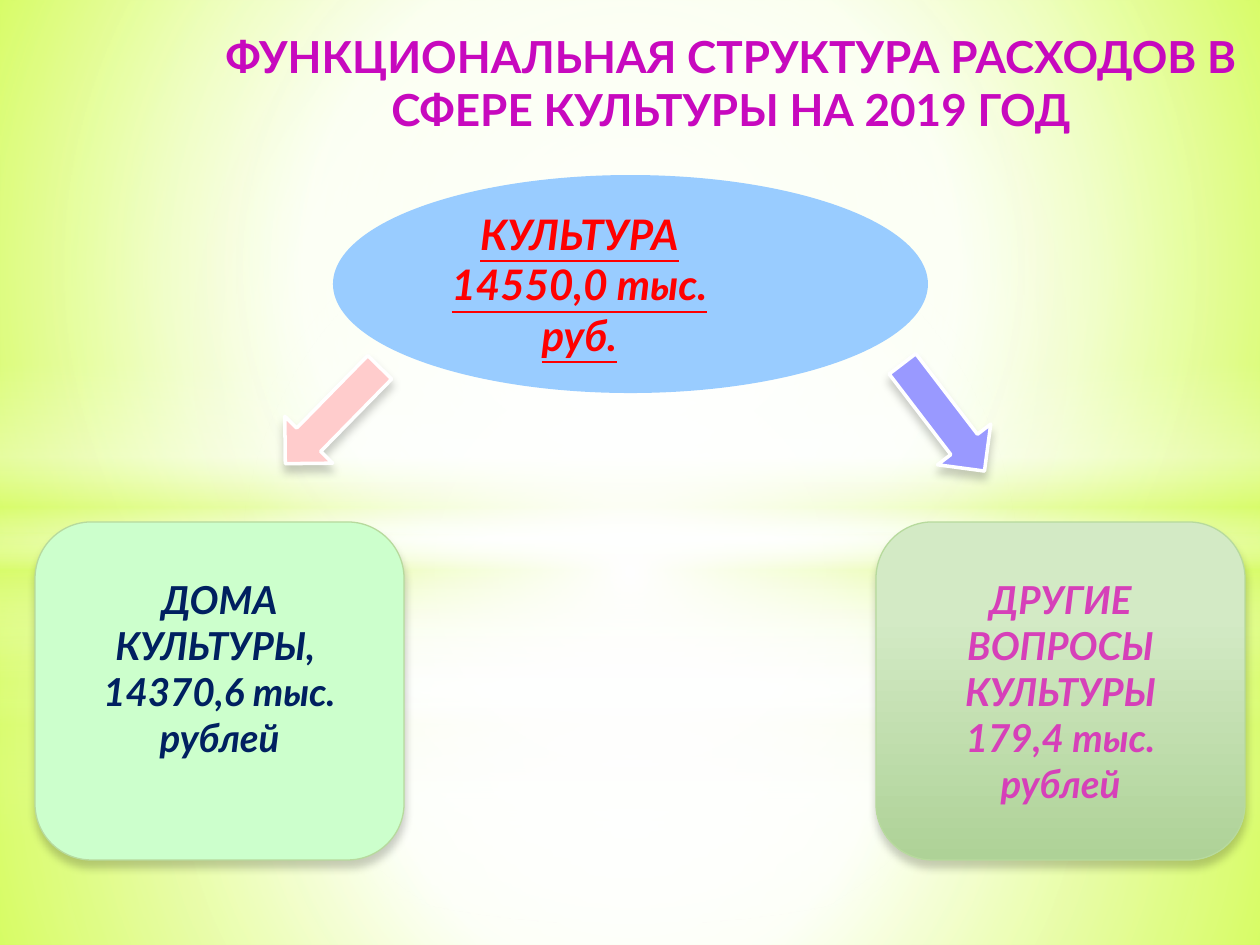
from pptx import Presentation
from pptx.dml.color import RGBColor
from pptx.enum import shapes, text
from pptx.oxml import parse_xml
from pptx.oxml.ns import nsdecls, qn
from pptx import util as u

SCALE = 914400 / 126  # EMU in one px
WIDTH, HEIGHT = 1260, 945
FONT = "Lato"
CENTRE = (50, 50, 50, 50)
COLOURS = {
    "white": "FFFFFF", "black": "000000", "lime": "D8FC68",
    "lime edge": "C9FF25", "lime core": "D6FF5B", "cream": "F8FFE3",
    "title": "C709BE", "red": "FF0000", "sky": "99CCFF",
    "rose": "FFCCCC", "violet": "9999FF", "mint": "CCFFCC",
    "navy": "002060", "pink": "D640B9", "border": "B7DA9D",
    "sage light": "D3EAC5", "sage dark": "AED297",
}


def px(length):
    return u.Emu(round(length * SCALE))


def colour(name):
    return RGBColor.from_string(COLOURS[name])


def set_gradient(fill, parent, stops, focus=None):
    """Stops are (position %, colour, opacity %); without a focus it runs downwards."""
    fill.background()
    stop_xml = "".join(
        f'<a:gs pos="{position * 1000}"><a:srgbClr val="{COLOURS[name]}">'
        f'<a:alpha val="{opacity * 1000}"/></a:srgbClr></a:gs>'
        for position, name, opacity in stops)
    if focus:
        sides = " ".join(f'{side}="{value * 1000}"' for side, value in zip("ltrb", focus))
        direction = f'<a:path path="circle"><a:fillToRect {sides}/></a:path>'
    else:
        direction = '<a:lin ang="5400000" scaled="0"/>'
    gradient = parse_xml(f'<a:gradFill {nsdecls("a")} rotWithShape="1">'
                         f'<a:gsLst>{stop_xml}</a:gsLst>{direction}</a:gradFill>')
    parent.replace(parent.find(qn("a:noFill")), gradient)


def add_shape(slide, kind, box, fill=None, line=None, line_width=1):
    shape = slide.shapes.add_shape(kind, *map(px, box))
    shape.shadow.inherit = False
    if fill:
        shape.fill.solid()
        shape.fill.fore_color.rgb = colour(fill)
    if line:
        shape.line.color.rgb = colour(line)
        shape.line.width = u.Pt(line_width)
    else:
        shape.line.fill.background()
    return shape


def add_shadow(shape):
    effects = shape.element.spPr.find(qn("a:effectLst"))
    effects.append(parse_xml(
        f'<a:outerShdw {nsdecls("a")} blurRad="{u.Pt(5)}" dist="{u.Pt(4)}" dir="5400000" '
        f'rotWithShape="0"><a:srgbClr val="{COLOURS["black"]}"><a:alpha val="20000"/>'
        '</a:srgbClr></a:outerShdw>'))


def write(shape, lines, size, ink, anchor=text.MSO_ANCHOR.MIDDLE, **style):
    frame = shape.text_frame
    frame.word_wrap = True
    frame.auto_size = text.MSO_AUTO_SIZE.NONE
    frame.vertical_anchor = anchor
    for index, line in enumerate(lines):
        paragraph = frame.add_paragraph() if index else frame.paragraphs[0]
        paragraph.alignment = text.PP_ALIGN.CENTER
        run = paragraph.add_run()
        run.text = line
        run.font.name = FONT
        run.font.size = u.Pt(size)
        run.font.bold = True
        run.font.color.rgb = colour(ink)
        for name, value in style.items():
            setattr(run.font, name, value)
    return frame


def add_light_layer(slide, horizon, band_top, glow_edge, extra):
    """Two panels meeting at the horizon, a band of light and a round glow."""
    rectangle, oval = shapes.MSO_SHAPE.RECTANGLE, shapes.MSO_SHAPE.OVAL
    lower = [(0, "white", 91 + extra), (37, "white", 76 + extra), (100, "lime", 79 + extra)]
    upper = [(0, "white", 89 + extra), (48, "white", 62 + extra), (100, "lime", 79 + extra)]
    band = [(0, "white", 0), (29, "white", 30), (45, "lime", 40),
            (55, "white", 26), (65, "lime", 60), (100, "white", 0)]
    glow = [(0, "white", 100), (glow_edge, "white", 0)]
    for kind, top, height, stops, focus in [
            (rectangle, horizon, HEIGHT - horizon, lower, CENTRE),
            (rectangle, 0, horizon, upper, CENTRE),
            (rectangle, band_top, 315, band, None),
            (oval, 220, 703, glow, CENTRE)]:
        shape = add_shape(slide, kind, (0, top, WIDTH, height))
        set_gradient(shape.fill, shape.element.spPr, stops, focus)


def add_backdrop(slide):
    fill = slide.background.fill
    fill.background()
    set_gradient(fill, slide.element.find(".//" + qn("p:bgPr")),
                 [(0, "lime core", 100), (60, "cream", 100), (100, "lime edge", 100)],
                 (20, 10, 20, 60))
    add_light_layer(slide, horizon=703, band_top=519, glow_edge=56, extra=0)
    add_light_layer(slide, horizon=533, band_top=365, glow_edge=54, extra=1)


def add_title(slide, box):
    title = slide.shapes.title
    title.left, title.top, title.width, title.height = map(px, box)
    write(title, ["ФУНКЦИОНАЛЬНАЯ СТРУКТУРА РАСХОДОВ В СФЕРЕ КУЛЬТУРЫ НА 2019 ГОД"],
          25.2, "title", text.MSO_ANCHOR.BOTTOM)
    title.element.getparent().append(title.element)  # in front of the backdrop


def add_total(slide, box):
    oval = add_shape(slide, shapes.MSO_SHAPE.OVAL, box, "sky")
    frame = write(oval, ["КУЛЬТУРА", "14550,0 тыс. руб."], 24, "red",
                  italic=True, underline=True)
    # The heading sits left of the amount's centre
    frame.paragraphs[0]._p.get_or_add_pPr().set("marR", str(px(102)))


def add_arrow(slide, box, rotation, fill):
    arrow = add_shape(slide, shapes.MSO_SHAPE.DOWN_ARROW, box, fill, "white", 2)
    arrow.rotation = rotation
    add_shadow(arrow)


def add_card(slide, box, lines, ink, fill=None, stops=None, bottom_inset=6):
    card = add_shape(slide, shapes.MSO_SHAPE.ROUNDED_RECTANGLE, box, fill, "border", 0.75)
    if stops:
        set_gradient(card.fill, card.element.spPr, stops)
    add_shadow(card)
    frame = write(card, lines, 22, ink, italic=True)
    frame.margin_bottom = px(bottom_inset)


def main():
    presentation = Presentation()
    presentation.slide_width, presentation.slide_height = px(WIDTH), px(HEIGHT)
    slide = presentation.slides.add_slide(presentation.slide_layouts[5])

    add_backdrop(slide)
    add_title(slide, (202, 19, 1058, 123))
    add_total(slide, (333, 175, 595, 218))

    # Arrows from the total to its parts
    add_arrow(slide, (299, 348, 67, 135), 44.4, "rose")
    add_arrow(slide, (910, 350, 67, 135), 322.6, "violet")

    # Parts of the total
    add_card(slide, (35, 522, 369, 338), ["ДОМА КУЛЬТУРЫ, ", "14370,6 тыс. рублей"],
             "navy", fill="mint", bottom_inset=52)
    add_card(slide, (876, 522, 369, 338), ["ДРУГИЕ ВОПРОСЫ КУЛЬТУРЫ", "179,4 тыс. рублей"],
             "pink", stops=[(28, "sage light", 100), (100, "sage dark", 100)])

    presentation.save("out.pptx")


if __name__ == "__main__":
    main()
